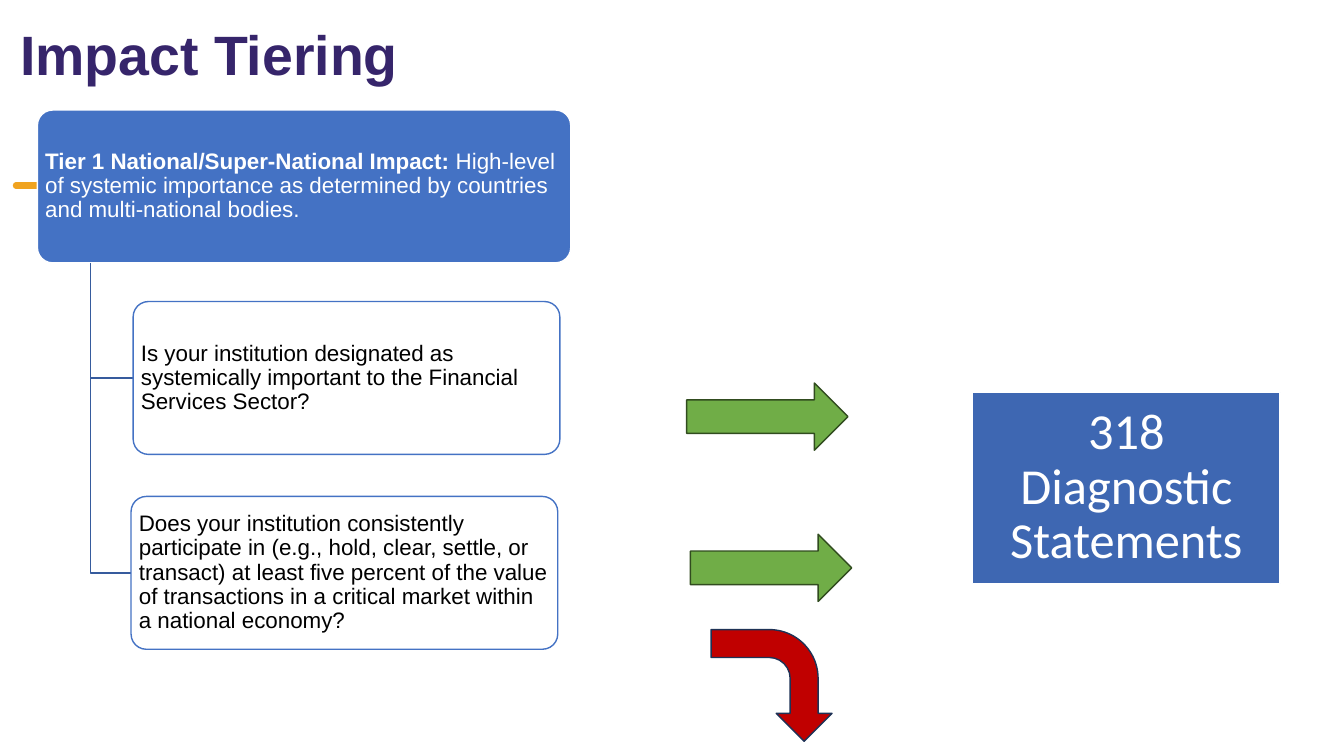
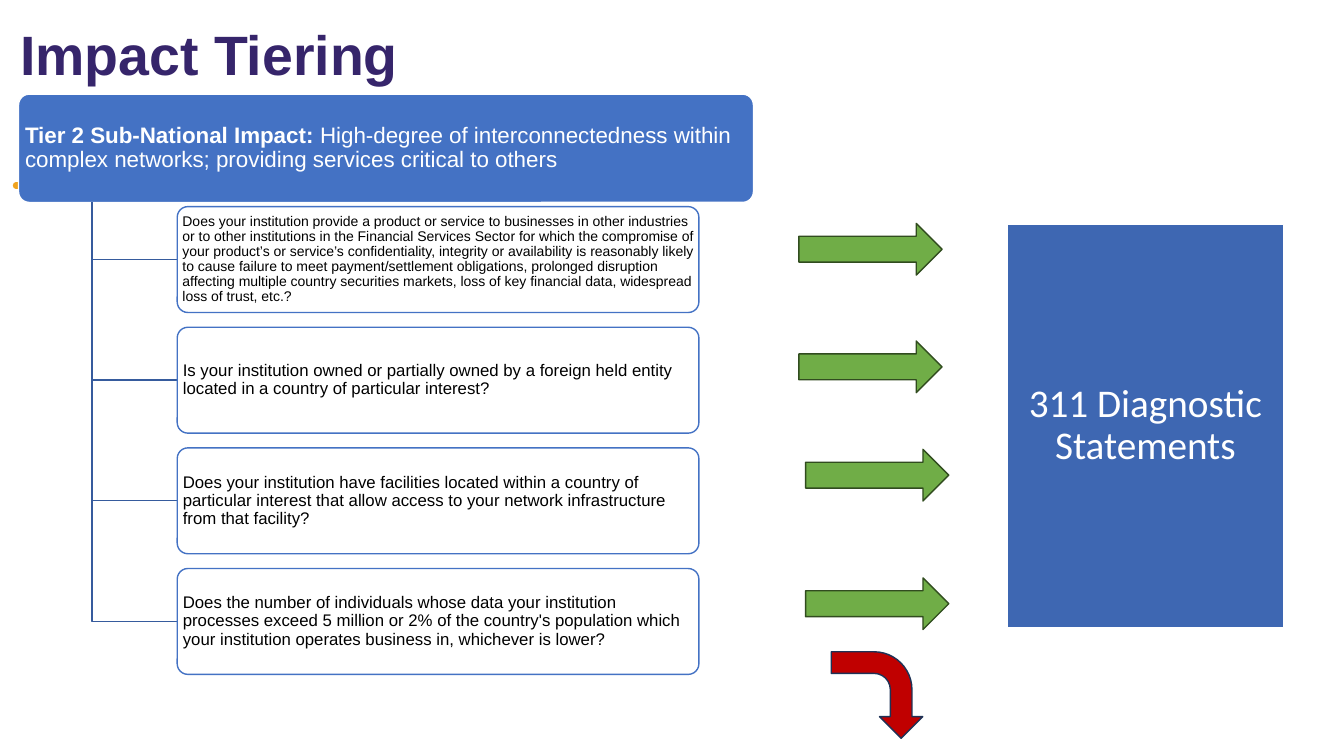
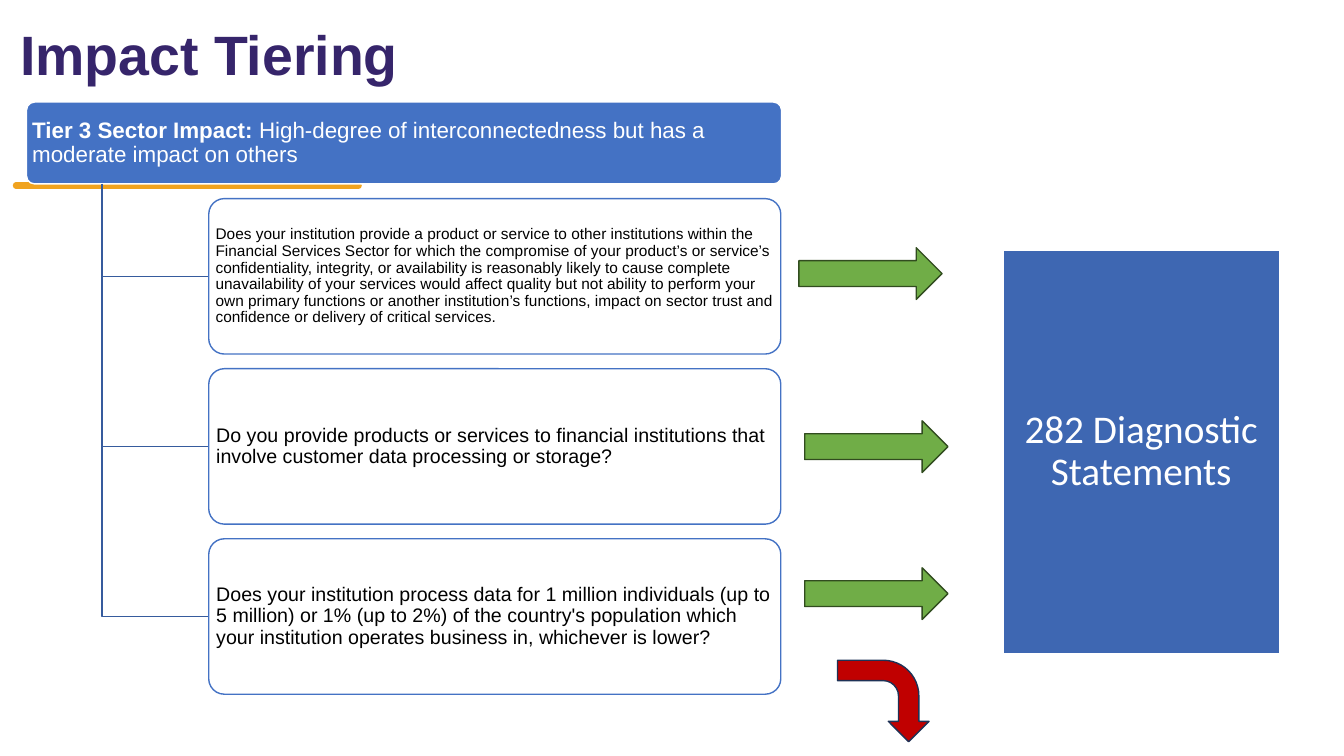
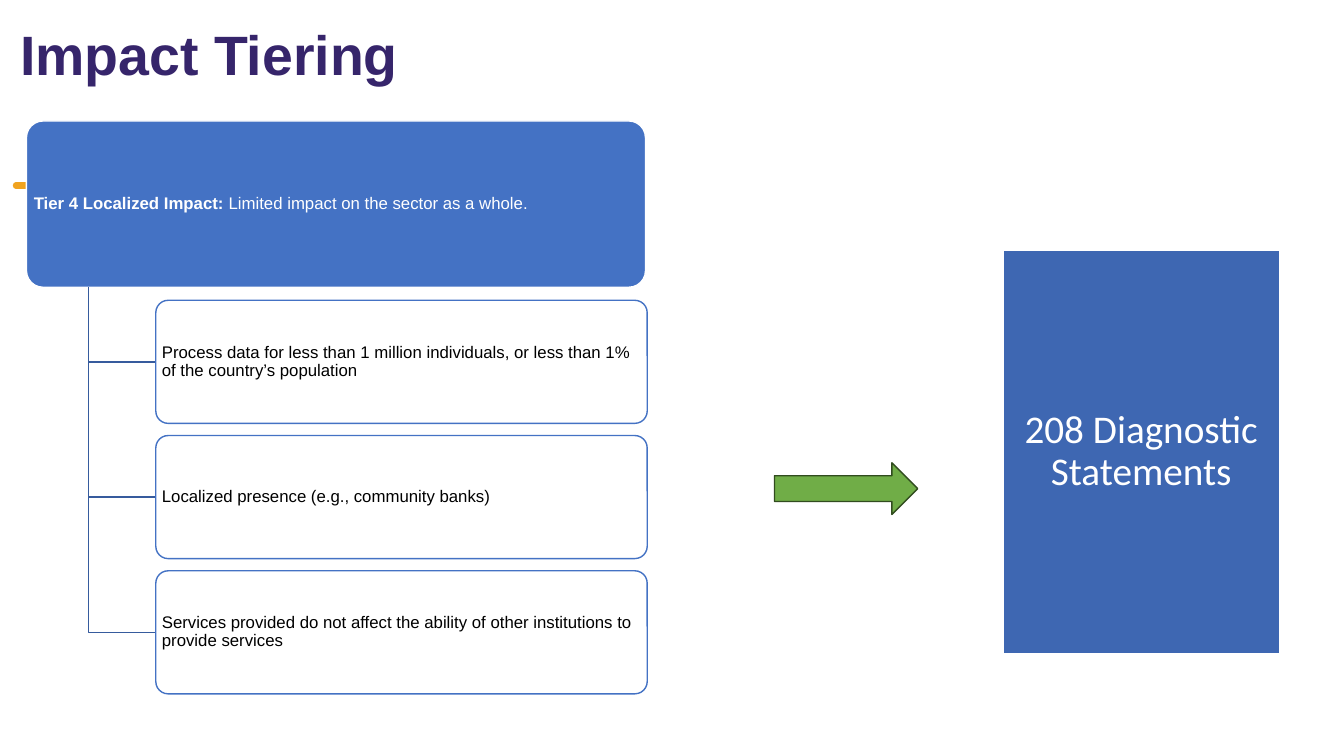
from dataclasses import dataclass

from lxml import etree
from pptx import Presentation
from pptx import util as u
from pptx.dml.color import RGBColor
from pptx.enum import shapes, text
from pptx.oxml.ns import qn

COLUMNS, ROWS = 160, 90
CELL = u.Inches(1) // 12
KIND = shapes.MSO_SHAPE
ALIGN = text.PP_ALIGN


@dataclass(frozen=True)
class Theme:
    title: str = "36256B"
    accent: str = "F0A31F"
    header: str = "4472C4"
    branch: str = "365B9D"
    statement: str = "3E67B2"
    yes: str = "70AD47"
    yes_edge: str = "314C1F"
    no: str = "C00000"
    no_edge: str = "1E3256"
    white: str = "FFFFFF"
    black: str = "000000"
    heading_font: str = "Arial"
    statement_font: str = "Calibri"
    title_size: float = 39.6
    large: int = 16
    medium: int = 14
    normal: int = 12
    small: int = 11
    tiny: int = 10
    statement_size: int = 28
    statement_large: int = 36
    edge: float = 1
    accent_width: float = 4.5
    line_spacing: float = 0.9


THEME = Theme()


def grid(*cells):
    """Turn grid columns or rows into slide lengths."""
    return [u.Emu(round(cell * CELL)) for cell in cells]


class TierDeck:
    def __init__(self, theme):
        self.theme = theme
        self.presentation = Presentation()
        self.presentation.slide_width, self.presentation.slide_height = grid(COLUMNS, ROWS)
        self.layout = self.presentation.slide_layouts[5]
        self.slide = None

    def start_slide(self, title):
        self.slide = self.presentation.slides.add_slide(self.layout)
        if len(self.presentation.slides) == 1:
            self.add_accent_to_layout()
        shape = self.slide.shapes.title
        shape.left, shape.top, shape.width, shape.height = grid(1.2, 4.8, 125.8, 4)
        shape.text_frame.auto_size = text.MSO_AUTO_SIZE.NONE
        self.add_text(shape, [(title, True)], self.theme.title_size, self.theme.title)

    def add_accent_to_layout(self):
        """Draw the accent line, then move it to the layout so every slide shows it."""
        line = self.slide.shapes.add_connector(
            shapes.MSO_CONNECTOR.STRAIGHT, *grid(1.9, 22.1, 42.7, 22.1))
        self.outline(line, self.theme.accent, self.theme.accent_width)
        properties = line.element.spPr
        properties.find(qn("a:ln")).set("cap", "rnd")
        etree.SubElement(properties, qn("a:effectLst"))
        self.layout.shapes.element.append(line.element)

    def outline(self, shape, color, width=None):
        shape.line.color.rgb = RGBColor.from_string(color)
        shape.line.width = u.Pt(width or self.theme.edge)

    def add_text(self, shape, runs, size, color, font=None, align=ALIGN.LEFT):
        """Set (words, bold) runs as one paragraph in the middle of a shape."""
        frame = shape.text_frame
        frame.word_wrap = True
        frame.vertical_anchor = text.MSO_ANCHOR.MIDDLE
        paragraph = frame.paragraphs[0]
        paragraph.alignment = align
        paragraph.line_spacing = self.theme.line_spacing
        for words, bold in runs:
            run = paragraph.add_run()
            run.text = words
            run.font.name = font or self.theme.heading_font
            run.font.size = u.Pt(size)
            run.font.bold = bold
            run.font.color.rgb = RGBColor.from_string(color)

    def inset(self, shape, across, down):
        frame = shape.text_frame
        frame.margin_left = frame.margin_right = u.Pt(across)
        frame.margin_top = frame.margin_bottom = u.Pt(down)

    def add_shape(self, kind, box, fill, edge):
        shape = self.slide.shapes.add_shape(kind, *grid(*box))
        shape.shadow.inherit = False
        shape.fill.solid()
        shape.fill.fore_color.rgb = RGBColor.from_string(fill)
        self.outline(shape, edge)
        return shape

    def add_card(self, box, fill, edge, runs, size, color):
        card = self.add_shape(KIND.ROUNDED_RECTANGLE, box, fill, edge)
        card.adjustments[0] = 0.1
        self.inset(card, 0.15 * size, 0.1 * size)
        self.add_text(card, runs, size, color)
        return card

    def add_branch(self, trunk, top, end, middle):
        """Draw a line down the trunk and across to a question."""
        builder = self.slide.shapes.build_freeform(*grid(trunk, top))
        builder.add_line_segments([grid(trunk, middle), grid(end, middle)], close=False)
        branch = builder.convert_to_shape()
        branch.shadow.inherit = False
        branch.fill.background()
        self.outline(branch, self.theme.branch)

    def add_tree(self, header, name, description, size, first, pitch, questions, drift=0):
        """Draw a header and its questions; drift shifts each question sideways."""
        theme = self.theme
        self.add_card(header, theme.header, theme.white,
                      [(name + " ", True), (description, False)], size, theme.white)
        left, top, width, height = first
        trunk = header[0] + header[2] / 10
        for index, (words, question_size) in enumerate(questions):
            x, y = left + index * drift, top + index * pitch
            self.add_branch(trunk, header[1] + header[3], x, y + height / 2)
            card = self.add_card((x, y, width, height), theme.white, theme.header,
                                 [(words, False)], question_size, theme.black)
            color = card.element.spPr.find(qn("a:solidFill"))[0]
            etree.SubElement(color, qn("a:alpha"), val="90000")

    def add_yes_arrows(self, places, size=(17.05, 6.15)):
        for place in places:
            self.add_shape(KIND.RIGHT_ARROW, place + size, self.theme.yes, self.theme.yes_edge)

    def add_no_arrow(self, box):
        arrow = self.add_shape(KIND.BENT_ARROW, box, self.theme.no, self.theme.no_edge)
        arrow.rotation = 90

    def add_statement(self, count, box, size=None):
        size = size or self.theme.statement_size
        panel = self.add_shape(KIND.RECTANGLE, box, self.theme.statement, self.theme.white)
        self.inset(panel, 0.2 * size, 0.2 * size)
        self.add_text(panel, [(f"{count} Diagnostic Statements", False)], size,
                      self.theme.white, self.theme.statement_font, ALIGN.CENTER)


TIERS = [
    dict(
        tree=dict(
            header=(4.45, 13.1, 63.5, 18.2),
            name="Tier 1 National/Super-National Impact:",
            description="High-level of systemic importance as determined by countries "
                        "and multi-national bodies.",
            size=THEME.large, first=(15.85, 35.9, 50.8, 18.2), pitch=23.2, drift=-0.25,
            questions=[
                ("Is your institution designated as systemically important to the "
                 "Financial Services Sector?", THEME.large),
                ("Does your institution consistently participate in (e.g., hold, clear, "
                 "settle, or transact) at least five percent of the value of transactions "
                 "in a critical market within a national economy?", THEME.large),
            ]),
        yes=dict(places=[(81.75, 45.6), (82.2, 63.6)], size=(19.2, 8)),
        no=(85.2, 74.4, 13.3, 14.4),
        statement=dict(count=318, box=(115.8, 46.7, 36.6, 22.8), size=THEME.statement_large),
    ),
    dict(
        tree=dict(
            header=(2.2, 11.2, 87.5, 12.9),
            name="Tier 2 Sub-National Impact:",
            description="High-degree of interconnectedness within complex networks; "
                        "providing services critical to others",
            size=THEME.large, first=(21.1, 24.6, 62.1, 12.6), pitch=14.36,
            questions=[
                ("Does your institution provide a product or service to businesses in other "
                 "industries or to other institutions in the Financial Services Sector for "
                 "which the compromise of your product’s or service’s confidentiality, "
                 "integrity or availability is reasonably likely to cause failure to meet "
                 "payment/settlement obligations, prolonged disruption affecting multiple "
                 "country securities markets, loss of key financial data, widespread loss "
                 "of trust, etc.?", THEME.tiny),
                ("Is your institution owned or partially owned by a foreign held entity "
                 "located in a country of particular interest?", THEME.normal),
                ("Does your institution have facilities located within a country of "
                 "particular interest that allow access to your network infrastructure "
                 "from that facility?", THEME.normal),
                ("Does the number of individuals whose data your institution processes "
                 "exceed 5 million or 2% of the country's population which your institution "
                 "operates business in, whichever is lower?", THEME.normal),
            ]),
        yes=dict(places=[(95.1, 26.6), (95.1, 40.6), (95.9, 53.5), (95.9, 68.8)]),
        no=(99.25, 77.3, 10.3, 10.9),
        statement=dict(count=311, box=(119.9, 26.7, 32.9, 48)),
    ),
    dict(
        tree=dict(
            header=(3.15, 12.15, 89.9, 9.75),
            name="Tier 3 Sector Impact:",
            description="High-degree of interconnectedness but has a moderate impact "
                        "on others",
            size=THEME.large, first=(24.85, 23.65, 68.1, 18.5), pitch=20.25,
            questions=[
                ("Does your institution provide a product or service to other institutions "
                 "within the Financial Services Sector for which the compromise of your "
                 "product’s or service’s confidentiality, integrity, or availability is "
                 "reasonably likely to cause complete unavailability of your services would "
                 "affect quality but not ability to perform your own primary functions or "
                 "another institution’s functions, impact on sector trust and confidence "
                 "or delivery of critical services.", THEME.small),
                ("Do you provide products or services to financial institutions that "
                 "involve customer data processing or storage?", THEME.medium),
                ("Does your institution process data for 1 million individuals (up to "
                 "5 million) or 1% (up to 2%) of the country's population which your "
                 "institution operates business in, whichever is lower?", THEME.medium),
            ]),
        yes=dict(places=[(95.1, 29.5), (95.8, 50.1), (95.8, 67.6)]),
        no=(100.3, 78, 9.7, 10.9),
        statement=dict(count=282, box=(119.4, 29.8, 32.9, 48)),
    ),
    dict(
        tree=dict(
            header=(3.15, 14.4, 73.7, 19.8),
            name="Tier 4 Localized Impact:",
            description="Limited impact on the sector as a whole.",
            size=THEME.normal, first=(18.55, 35.75, 58.5, 14.65), pitch=16.1,
            questions=[
                ("Process data for less than 1 million individuals, or less than 1% of the "
                 "country’s population", THEME.normal),
                ("Localized presence (e.g., community banks)", THEME.normal),
                ("Services provided do not affect the ability of other institutions to "
                 "provide services", THEME.normal),
            ]),
        yes=dict(places=[(92.2, 55.1)]),
        no=None,
        statement=dict(count=208, box=(119.4, 29.8, 32.9, 48)),
    ),
]


def main():
    deck = TierDeck(THEME)
    for tier in TIERS:
        deck.start_slide("Impact Tiering")
        deck.add_tree(**tier["tree"])
        deck.add_yes_arrows(**tier["yes"])
        deck.add_statement(**tier["statement"])
        if tier["no"]:
            deck.add_no_arrow(tier["no"])
    deck.presentation.save("out.pptx")


if __name__ == "__main__":
    main()
